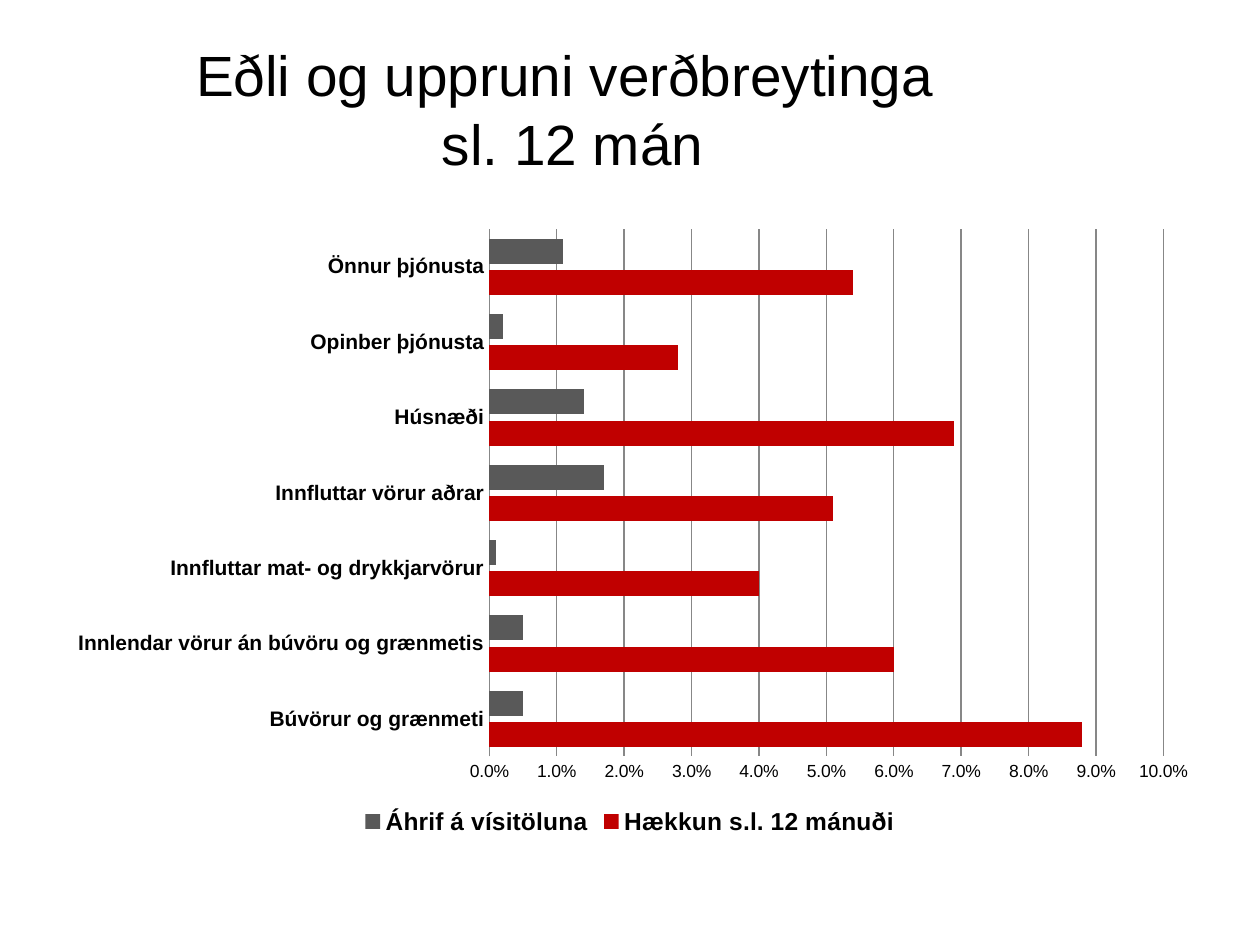
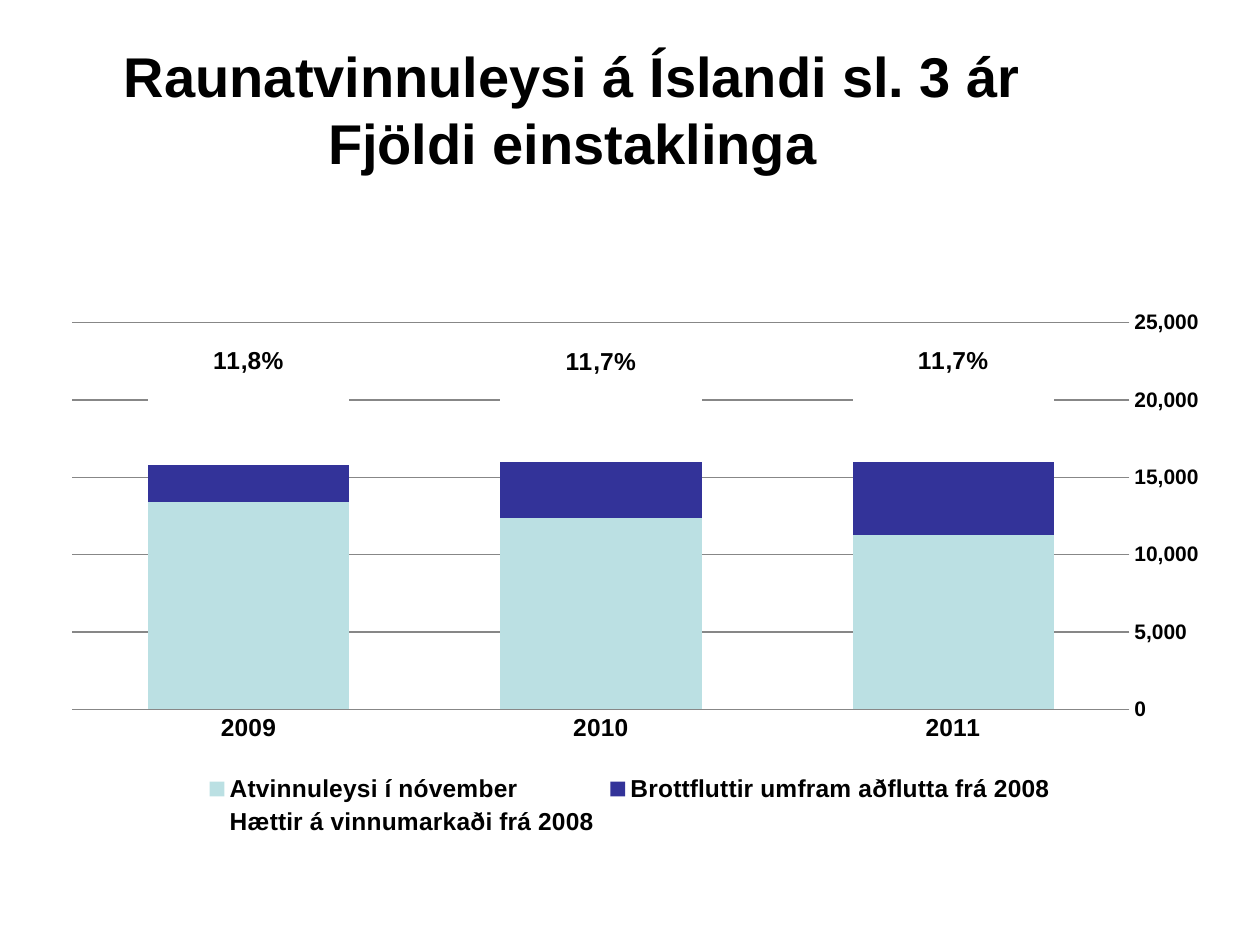
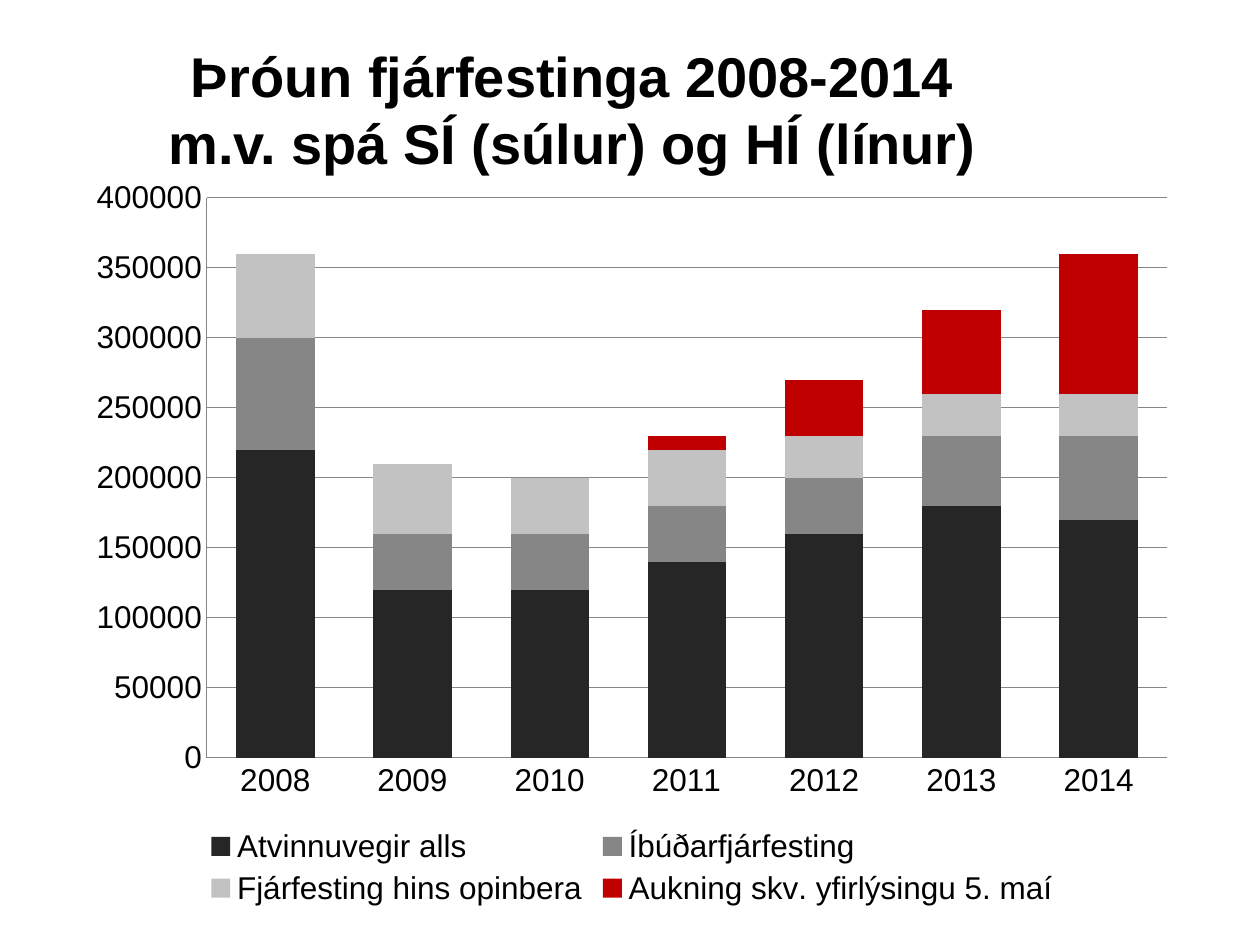
from pptx import Presentation
from pptx.chart.data import CategoryChartData
from pptx.dml.color import RGBColor
from pptx.enum.chart import XL_CHART_TYPE, XL_LEGEND_POSITION, XL_TICK_MARK
from pptx.enum.text import MSO_ANCHOR, PP_ALIGN
from pptx.oxml import parse_xml
from pptx.oxml.ns import nsdecls, qn
from pptx.util import Inches, Pt

FONT = "Arial"
BLACK, GRID, RED = "000000", "878787", "C00000"
BOX = (0.39, 1.72, 9.22, 4.95)


def tint(code):
    """Turn a hex string into a colour."""
    return RGBColor.from_string(code)


def style(font, size, bold=False):
    """Set the shared face and colour with a given size and weight."""
    font.name, font.size, font.bold = FONT, Pt(size), bold
    font.color.rgb = tint(BLACK)


def add_title(slide, text, size=32, bold=True):
    """Add the centred title of a slide."""
    box = slide.shapes.add_textbox(
        Inches(0.39), Inches(0.39), Inches(8.31), Inches(0.94))
    frame = box.text_frame
    frame.word_wrap = True
    frame.vertical_anchor = MSO_ANCHOR.MIDDLE
    frame.margin_top = frame.margin_bottom = 0
    frame.text = text
    line = frame.paragraphs[0]
    line.alignment = PP_ALIGN.CENTER
    style(line.font, size, bold)


def add_bars(slide, box, kind, cats, rows, overlap):
    """Add a bar chart whose rows are name, colour and values."""
    data = CategoryChartData()
    data.categories = cats
    for name, _, vals in rows:
        data.add_series(name, vals)
    area = [Inches(side) for side in box]
    chart = slide.shapes.add_chart(kind, *area, data).chart
    chart.has_title = False
    plot = chart.plots[0]
    plot.gap_width, plot.overlap = 75, overlap
    plot.vary_by_categories = False
    for bars, (_, code, _) in zip(plot.series, rows):
        bars.invert_if_negative = False
        bars.format.fill.solid()
        bars.format.fill.fore_color.rgb = tint(code)
    return chart


def set_text(chart, cat, val, key):
    """Style axis and legend text, each given as size and weight."""
    style(chart.font, val[0])
    for axis, look in ((chart.category_axis, cat), (chart.value_axis, val)):
        axis.major_tick_mark = axis.minor_tick_mark = XL_TICK_MARK.NONE
        style(axis.tick_labels.font, *look)
        axis.format.line.color.rgb = tint(GRID)
    chart.has_legend = True
    chart.legend.position = XL_LEGEND_POSITION.BOTTOM
    chart.legend.include_in_layout = False
    style(chart.legend.font, *key)


def set_scale(chart, top, step, form, line=False):
    """Set the range, grid and number format of the value axis."""
    axis = chart.value_axis
    axis.minimum_scale, axis.maximum_scale, axis.major_unit = 0, top, step
    axis.has_major_gridlines = True
    axis.major_gridlines.format.line.color.rgb = tint(GRID)
    axis.tick_labels.number_format = form
    axis.tick_labels.number_format_is_linked = False
    if not line:
        axis.format.line.fill.background()


def layout(x, y, extra="", modes=""):
    """Make a manual layout element."""
    return parse_xml(
        f'<c:layout {nsdecls("c")}><c:manualLayout>{modes}'
        f'<c:x val="{x}"/><c:y val="{y}"/>{extra}</c:manualLayout></c:layout>')


def set_plot(chart, x, y, wide, high):
    """Fix the inner plot area as shares of the chart."""
    area = chart.plots[0]._element.getparent()
    for old in area.findall(qn("c:layout")):
        area.remove(old)
    modes = ('<c:layoutTarget val="inner"/>'
             '<c:xMode val="edge"/><c:yMode val="edge"/>')
    extra = f'<c:w val="{wide}"/><c:h val="{high}"/>'
    area.insert(0, layout(x, y, extra, modes))


def add_tags(bars, texts, shift):
    """Label each point with its own text, moved by a share of the height."""
    for spot, text in enumerate(texts):
        frame = bars.points[spot].data_label.text_frame
        frame.text = text
        style(frame.paragraphs[0].runs[0].font, 14, True)
    for tag in bars._element.iter(qn("c:dLbl")):
        tag.find(qn("c:idx")).addnext(layout(0, shift))
    for lead in bars._element.iter(qn("c:showLeaderLines")):
        lead.set("val", "0")


def show_price(slide):
    """Build the slide on price changes."""
    add_title(slide, "Eðli og uppruni verðbreytinga \vsl. 12 mán", 32.4, False)
    cats = [" Búvörur og grænmeti", " Innlendar vörur án búvöru og grænmetis",
            " Innfluttar mat- og drykkjarvörur", " Innfluttar vörur aðrar",
            " Húsnæði", " Opinber þjónusta", " Önnur þjónusta"]
    rows = [
        ("Hækkun s.l. 12 mánuði", RED,
         (0.088, 0.06, 0.04, 0.051, 0.069, 0.028, 0.054)),
        ("Áhrif á vísitöluna", "595959",
         (0.005, 0.005, 0.001, 0.017, 0.014, 0.002, 0.011)),
    ]
    chart = add_bars(slide, BOX, XL_CHART_TYPE.BAR_CLUSTERED, cats, rows, -25)
    set_text(chart, (12, True), (10, False), (14, True))
    set_scale(chart, 0.1, 0.01, "0.0%")


def show_jobs(slide):
    """Build the slide on real unemployment."""
    add_title(slide, "Raunatvinnuleysi á Íslandi sl. 3 ár\vFjöldi einstaklinga")
    rows = [
        ("Atvinnuleysi í nóvember", "BBE0E3", (11300, 12400, 13400)),
        ("Brottfluttir umfram aðflutta frá 2008", "333399", (4700, 3600, 2400)),
        ("Hættir á vinnumarkaði frá 2008", "FFFFFF", (5000, 4900, 5400)),
    ]
    chart = add_bars(slide, BOX, XL_CHART_TYPE.COLUMN_STACKED,
                     ["2011", "2010", "2009"], rows, 100)
    set_text(chart, (14, True), (12, True), (14, True))
    set_scale(chart, 25000, 5000, "#,##0")
    chart.category_axis.reverse_order = True
    set_plot(chart, 0.02, 0.17, 0.91, 0.62)
    add_tags(chart.plots[0].series[2], ["11,7%", "11,7%", "11,8%"], -0.1)


def show_funds(slide):
    """Build the slide on investment."""
    add_title(slide, "Þróun fjárfestinga 2008-2014\v"
                     "m.v. spá SÍ (súlur) og HÍ (línur)")
    rows = [
        ("Atvinnuvegir alls", "262626",
         (220000, 120000, 120000, 140000, 160000, 180000, 170000)),
        ("Íbúðarfjárfesting", "868686",
         (80000, 40000, 40000, 40000, 40000, 50000, 60000)),
        ("Fjárfesting hins opinbera", "C2C2C2",
         (60000, 50000, 40000, 40000, 30000, 30000, 30000)),
        ("Aukning skv. yfirlýsingu 5. maí", RED,
         (None, None, None, 10000, 40000, 60000, 100000)),
    ]
    chart = add_bars(slide, (0.59, 1.31, 8.85, 5.93),
                     XL_CHART_TYPE.COLUMN_STACKED,
                     [str(year) for year in range(2008, 2015)], rows, 100)
    set_text(chart, (18, False), (18, False), (18, False))
    set_scale(chart, 400000, 50000, "General", True)


def main():
    """Build and save the deck."""
    deck = Presentation()
    deck.slide_width, deck.slide_height = Inches(10), Inches(7.5)
    for show in (show_price, show_jobs, show_funds):
        show(deck.slides.add_slide(deck.slide_layouts[6]))
    deck.save("out.pptx")


if __name__ == "__main__":
    main()
